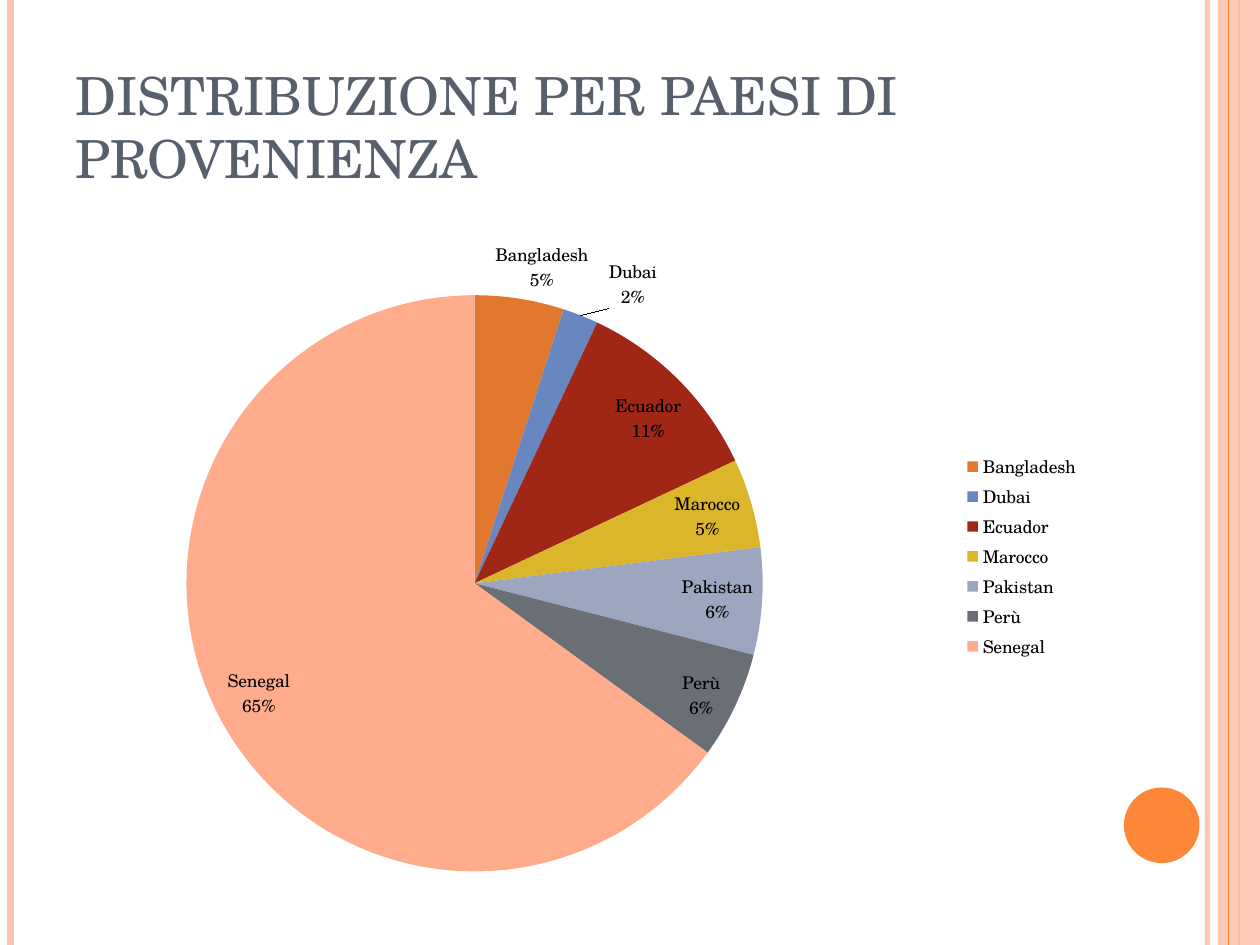
from dataclasses import dataclass

from lxml import etree
from pptx import Presentation
from pptx.chart.data import CategoryChartData
from pptx.dml.color import RGBColor
from pptx.enum.chart import XL_CHART_TYPE, XL_LABEL_POSITION, XL_LEGEND_POSITION
from pptx.enum.shapes import MSO_CONNECTOR, MSO_SHAPE
from pptx.enum.text import MSO_ANCHOR
from pptx.oxml import parse_xml
from pptx.oxml.ns import nsdecls, qn
from pptx.util import Pt

PIE = XL_CHART_TYPE.PIE
BEST_FIT = XL_LABEL_POSITION.BEST_FIT
LEGEND_RIGHT = XL_LEGEND_POSITION.RIGHT
STRAIGHT = MSO_CONNECTOR.STRAIGHT
RECTANGLE, OVAL = MSO_SHAPE.RECTANGLE, MSO_SHAPE.OVAL
BOTTOM = MSO_ANCHOR.BOTTOM


@dataclass(frozen=True)
class Theme:
    font: str = "TeX Gyre Schola"
    title_size: int = 30
    chart_size: int = 10
    title: str = "575F6D"
    text: str = "000000"
    accent: str = "FE8637"
    pale: str = "FEC3AE"


THEME = Theme()
WIDTH, HEIGHT = 720, 540

# Country, percentage, slice colour
COUNTRIES = [
    ("Bangladesh", 5, "E2772E"),
    ("Dubai", 2, "6887C0"),
    ("Ecuador", 11, "A02615"),
    ("Marocco", 5, "DBB62A"),
    ("Pakistan", 6, "9CA6BF"),
    ("Perù", 6, "6A6F76"),
    ("Senegal", 65, "FFAC8C"),
]


def rgb(value):
    return RGBColor.from_string(value)


def style_font(font, size, color):
    font.name = THEME.font
    font.size = Pt(size)
    font.color.rgb = rgb(color)


def set_alpha(element, percent):
    color = next(element.iter(qn("a:srgbClr")))
    etree.SubElement(color, qn("a:alpha")).set("val", str(percent * 1000))


def add_stripe(slide, x, top, height, color, weight, alpha=100):
    stripe = slide.shapes.add_connector(STRAIGHT, Pt(x), Pt(top), Pt(x), Pt(top + height))
    stripe.line.color.rgb = rgb(color)
    stripe.line.width = Pt(weight)
    properties = stripe._element.spPr
    etree.SubElement(properties, qn("a:effectLst"))
    if alpha < 100:
        set_alpha(properties, alpha)


def add_solid(slide, kind, box, color, alpha=100):
    solid = slide.shapes.add_shape(kind, *map(Pt, box))
    solid.shadow.inherit = False
    solid.fill.solid()
    solid.fill.fore_color.rgb = rgb(color)
    solid.line.fill.background()
    if alpha < 100:
        set_alpha(solid._element.spPr, alpha)


def add_decoration(slide, left, top, width, height):
    right = left + width
    add_stripe(slide, right - 30, top, height, THEME.pale, 3, 93)
    add_stripe(slide, left + 6, top, height, THEME.pale, 4.5)
    add_stripe(slide, right - 12, top, height, THEME.accent, 1.5)
    add_solid(slide, RECTANGLE, (right - 24, top, 24, height), THEME.pale, 87)
    add_stripe(slide, right - 18, top, height, THEME.accent, 0.75)
    add_solid(slide, OVAL, (right - 77.76, top + 450, 43.2, 43.2), THEME.accent)


def add_title(slide, left, top, width, height):
    frame = slide.shapes.add_textbox(Pt(left), Pt(top), Pt(width), Pt(height)).text_frame
    frame.word_wrap = True
    frame.vertical_anchor = BOTTOM
    heading = frame.paragraphs[0]
    heading.text = "DISTRIBUZIONE PER PAESI DI PROVENIENZA"
    style_font(heading.font, THEME.title_size, THEME.title)


def fix_plot_area(chart, x, y, w, h):
    """Pin the pie to fractions of the chart frame."""
    plot_area = chart._chartSpace.chart.plotArea
    for old in plot_area.findall(qn("c:layout")):
        plot_area.remove(old)
    plot_area.insert(0, parse_xml(
        f'<c:layout {nsdecls("c")}><c:manualLayout><c:layoutTarget val="inner"/>'
        '<c:xMode val="edge"/><c:yMode val="edge"/>'
        f'<c:x val="{x}"/><c:y val="{y}"/><c:w val="{w}"/><c:h val="{h}"/>'
        '</c:manualLayout></c:layout>'))


def add_country_pie(slide, left, top, width, height):
    data = CategoryChartData()
    data.categories = [country for country, _, _ in COUNTRIES]
    data.add_series("Series 1", [share for _, share, _ in COUNTRIES])
    chart = slide.shapes.add_chart(
        PIE, Pt(left), Pt(top), Pt(width), Pt(height), data).chart
    style_font(chart.font, THEME.chart_size, THEME.text)
    chart.has_title = False
    chart.has_legend = True
    chart.legend.position = LEGEND_RIGHT
    chart.legend.include_in_layout = False
    fix_plot_area(chart, 0.12, 0.11, 0.56, 0.86)

    # Slices
    pie = chart.plots[0]
    pie.vary_by_categories = True
    for index, (_, _, color) in enumerate(COUNTRIES):
        fill = pie.series[0].points[index].format.fill
        fill.solid()
        fill.fore_color.rgb = rgb(color)

    # Labels: country above percentage
    labels = pie.series[0].data_labels
    labels.show_category_name = True
    labels.show_percentage = True
    labels.show_value = False
    labels.number_format = "0%"
    labels.number_format_is_linked = False
    labels.position = BEST_FIT
    style_font(labels.font, THEME.chart_size, THEME.text)
    separator = etree.Element(qn("c:separator"))
    separator.text = "\n"
    labels._element.find(qn("c:showBubbleSize")).addnext(separator)


def main():
    deck = Presentation()
    deck.slide_width, deck.slide_height = Pt(WIDTH), Pt(HEIGHT)
    slide = deck.slides.add_slide(deck.slide_layouts[6])
    add_decoration(slide, 0, 0, WIDTH, HEIGHT)
    add_title(slide, 36, 21.6, 588, 90)
    add_country_pie(slide, 36, 126, 588, 384)
    deck.save("out.pptx")


if __name__ == "__main__":
    main()
